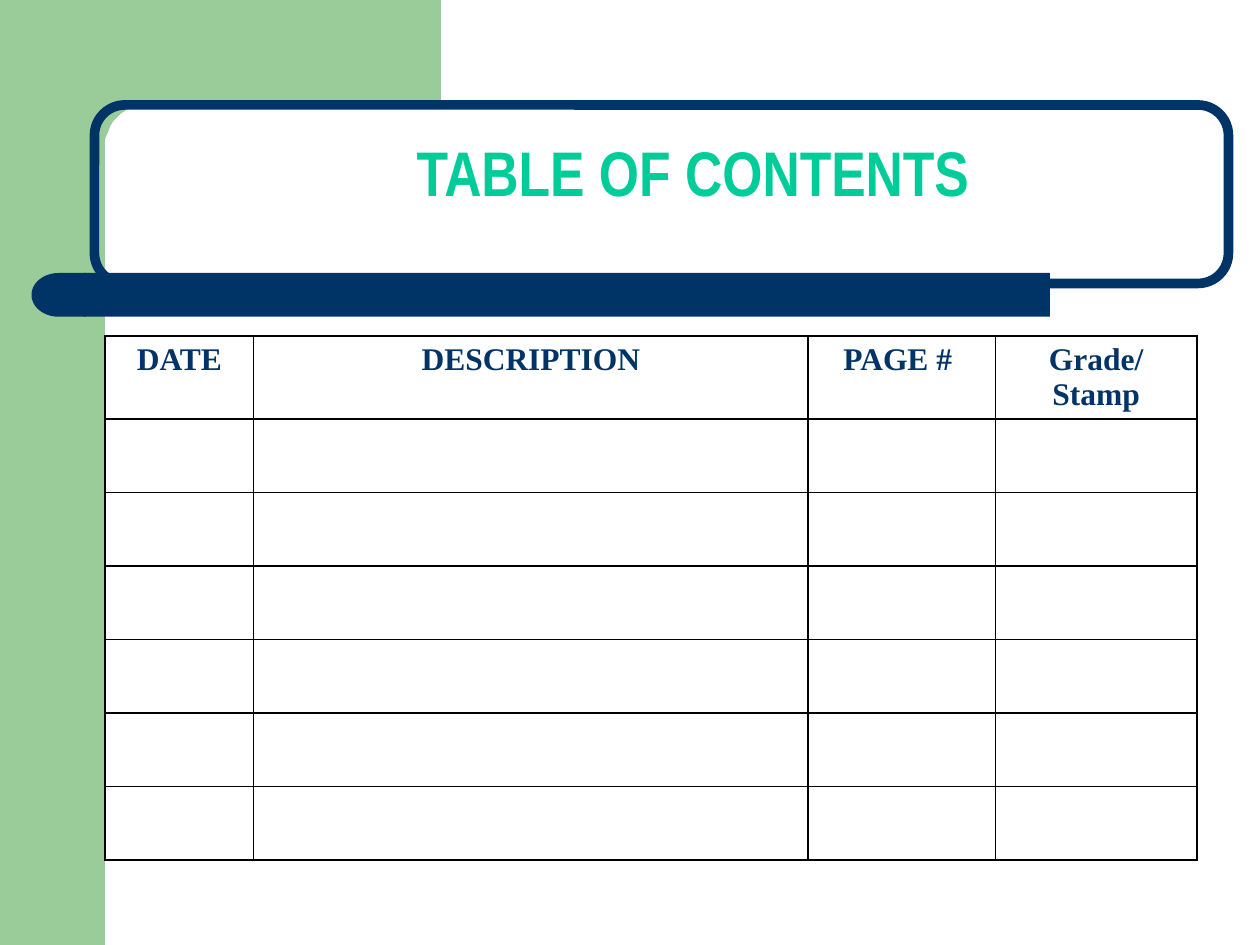
from dataclasses import dataclass
from math import cos, pi, sin

from pptx import Presentation
from pptx.dml.color import RGBColor
from pptx.enum.shapes import MSO_SHAPE
from pptx.enum.text import MSO_ANCHOR, PP_ALIGN
from pptx.oxml import parse_xml
from pptx.oxml.ns import nsdecls
from pptx.util import Pt


@dataclass(frozen=True)
class Theme:
    green: str = "99CC99"
    navy: str = "003366"
    title_color: str = "00CC99"
    border: str = "000000"
    title_font: str = "Arial Narrow"
    table_font: str = "Times New Roman"
    title_size: float = 36
    table_size: float = 18
    border_width: float = 1
    frame_width: float = 5.5


def write_text(text_frame, text, *, font, size, color, bold=True, align=PP_ALIGN.CENTER):
    for index, line in enumerate(text.split("\n")):
        paragraph = text_frame.add_paragraph() if index else text_frame.paragraphs[0]
        paragraph.alignment = align
        run = paragraph.add_run()
        run.text = line
        run.font.name = font
        run.font.size = Pt(size)
        run.font.bold = bold
        run.font.color.rgb = RGBColor.from_string(color)


class SlideBuilder:
    def __init__(self, slide, theme):
        self.slide = slide
        self.theme = theme

    def paint(self, shape, fill=None, line=None, width=0):
        shape.shadow.inherit = False
        if fill:
            shape.fill.solid()
            shape.fill.fore_color.rgb = RGBColor.from_string(fill)
        else:
            shape.fill.background()
        if line:
            shape.line.color.rgb = RGBColor.from_string(line)
            shape.line.width = Pt(width)
        else:
            shape.line.fill.background()

    def shape(self, kind, box, *, corner=None, rotation=0, **style):
        shape = self.slide.shapes.add_shape(kind, *map(Pt, box))
        if corner is not None:
            shape.adjustments[0] = corner
        shape.rotation = rotation
        self.paint(shape, **style)

    def outline(self, points, **style):
        builder = self.slide.shapes.build_freeform(*points[0], scale=Pt(1))
        builder.add_line_segments(points[1:], close=True)
        self.paint(builder.convert_to_shape(), **style)

    def title(self, text, box):
        text_frame = self.slide.shapes.add_textbox(*map(Pt, box)).text_frame
        text_frame.word_wrap = False
        text_frame.vertical_anchor = MSO_ANCHOR.TOP
        write_text(text_frame, text, font=self.theme.title_font,
                   size=self.theme.title_size, color=self.theme.title_color)

    def border_cell(self, cell):
        properties = cell._tc.get_or_add_tcPr()
        for position, side in enumerate(("lnL", "lnR", "lnT", "lnB")):
            properties.insert(position, parse_xml(
                f'<a:{side} {nsdecls("a")} w="{Pt(self.theme.border_width)}"><a:solidFill>'
                f'<a:srgbClr val="{self.theme.border}"/></a:solidFill></a:{side}>'))

    def table(self, headers, left, top, widths, heights):
        frame = self.slide.shapes.add_table(
            len(heights), len(widths), Pt(left), Pt(top), Pt(sum(widths)), Pt(sum(heights)))
        table = frame.table
        table.first_row = False
        table.horz_banding = False
        for column, width in zip(table.columns, widths):
            column.width = Pt(width)
        for row, height in zip(table.rows, heights):
            row.height = Pt(height)
        for cell in table.iter_cells():
            cell.fill.background()
            self.border_cell(cell)
        for cell, header in zip(table.rows[0].cells, headers):
            write_text(cell.text_frame, header, font=self.theme.table_font,
                       size=self.theme.table_size, color=self.theme.navy)


def main():
    presentation = Presentation()
    presentation.slide_width = Pt(720)
    presentation.slide_height = Pt(540)
    slide = presentation.slides.add_slide(presentation.slide_layouts[6])
    theme = Theme()
    builder = SlideBuilder(slide, theme)

    builder.shape(MSO_SHAPE.RECTANGLE, (0, 0, 60, 540), fill=theme.green)
    radius, steps = 23.5, 12
    angles = [step * pi / 2 / steps for step in range(steps + 1)]
    curve = [(83.5 - radius * sin(angle), 83.5 - radius * cos(angle)) for angle in angles]
    builder.outline([(252, 0), (252, 60), *curve, (60, 92), (36, 92), (36, 0)],
                    fill=theme.green)
    builder.shape(MSO_SHAPE.ROUNDED_RECTANGLE, (48, 156, 552, 25), corner=0, fill=theme.navy)
    builder.shape(MSO_SHAPE.FLOWCHART_DELAY, (18, 156, 31, 25), rotation=180, fill=theme.navy)

    builder.table(("DATE", "DESCRIPTION", "PAGE # ", "Grade/\nStamp"), 60, 192,
                  widths=(85, 316.8, 107, 115.2), heights=(47.5, *[42] * 6))
    builder.title("TABLE OF CONTENTS", (96, 73, 600, 74))
    builder.shape(MSO_SHAPE.ROUNDED_RECTANGLE, (54, 60, 648, 102), corner=0.17,
                  line=theme.navy, width=theme.frame_width)
    presentation.save("out.pptx")


if __name__ == "__main__":
    main()
